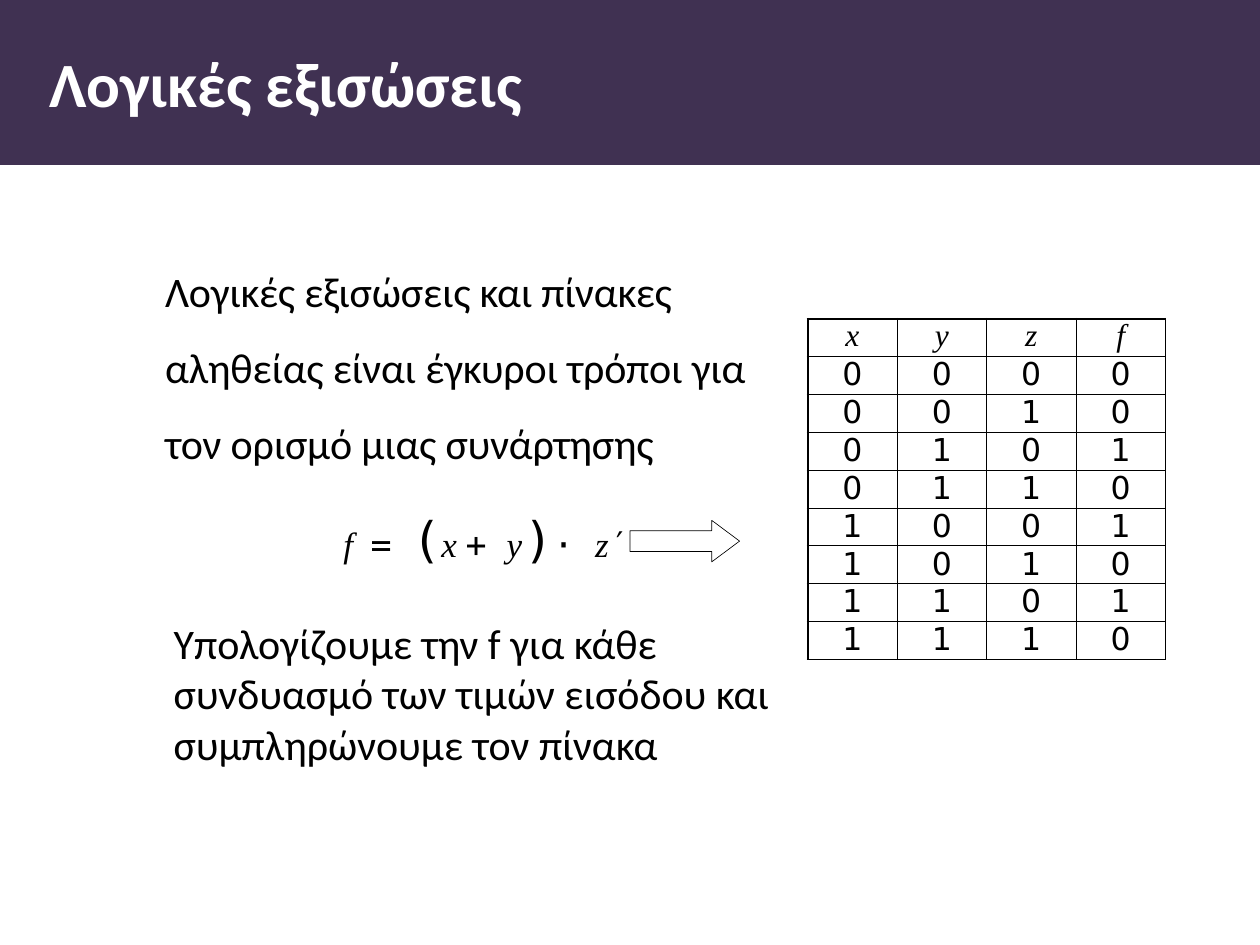
from lxml import etree
from itertools import product
from pptx import Presentation, util as u
from pptx.dml.color import RGBColor
from pptx.enum import shapes, text
from pptx.oxml import ns

PURPLE = RGBColor(0x40, 0x31, 0x52)
WHITE = RGBColor(0xFF, 0xFF, 0xFF)
BLACK = RGBColor(0, 0, 0)
BODY, SERIF, MONO, DIGITS = "Calibri", "Times New Roman", "DejaVu Sans Mono", "DejaVu Sans"
THICK, MEDIUM, THIN = 1.12, 0.75, 0.5

# Text, size, font, letter spacing in points
FORMULA = [
    ("f  ", 20, SERIF, 0), ("= ", 20, MONO, -0.6), ("(", 28, MONO, -1.3),
    ("x ", 20, SERIF, -0.1), ("+ ", 20, MONO, -0.6), ("y", 20, SERIF, 0.8),
    (")", 28, MONO, -1.1), ("⋅ ", 20, MONO, -0.1), ("z", 20, SERIF, 0.6),
    ("′", 32, MONO, 0.4),
]


def add_run(paragraph, words, size, font, color=BLACK, spacing=0, bold=False):
    """Add a run; the serif face is always italic, as for variables."""
    run = paragraph.add_run()
    run.text = words
    run.font.size = u.Pt(size)
    run.font.name = font
    run.font.bold = bold
    run.font.italic = font == SERIF
    run.font.color.rgb = color
    if spacing:
        run._r.get_or_add_rPr().set("spc", str(round(spacing * 100)))
    return run


def indent(paragraph, left, first=0):
    properties = paragraph._p.get_or_add_pPr()
    properties.set("marL", str(u.Inches(left)))
    properties.set("indent", str(u.Inches(first)))


def add_text_frame(slide, box, inset=None):
    frame = slide.shapes.add_textbox(*map(u.Inches, box)).text_frame
    frame.word_wrap = True
    if inset is not None:
        frame.margin_left = frame.margin_top = u.Inches(inset)
        frame.margin_right = frame.margin_bottom = u.Inches(inset)
    return frame


def set_title(slide, box):
    title = slide.shapes.title
    title.left, title.top, title.width, title.height = map(u.Inches, box)
    title.fill.solid()
    title.fill.fore_color.rgb = PURPLE
    frame = title.text_frame
    frame.auto_size = text.MSO_AUTO_SIZE.NONE
    frame.vertical_anchor = text.MSO_ANCHOR.MIDDLE
    paragraph = frame.paragraphs[0]
    paragraph.alignment = text.PP_ALIGN.LEFT
    indent(paragraph, 0.29)
    add_run(paragraph, "Λογικές εξισώσεις", 36, BODY, WHITE, bold=True)


def add_definition(slide, box):
    frame = add_text_frame(slide, box, inset=0)
    sentence, formula = frame.paragraphs[0], frame.add_paragraph()
    sentence.line_spacing = formula.line_spacing = 1.5
    indent(sentence, 0.01)
    add_run(sentence, "Λογικές εξισώσεις και πίνακες αληθείας είναι έγκυροι τρόποι "
            "για τον ορισµό µιας συνάρτησης", 24, BODY, spacing=-0.1)
    formula.alignment = text.PP_ALIGN.CENTER
    indent(formula, 0.2, -0.19)
    for words, size, font, spacing in FORMULA:
        run = add_run(formula, words, size, font, spacing=spacing)
    run._r.get_or_add_rPr().set("baseline", "2000")


def add_explanation(slide, box):
    paragraph = add_text_frame(slide, box).paragraphs[0]
    add_run(paragraph, "Υπολογίζουµε την f για κάθε συνδυασµό των τιµών εισόδου "
            "και συµπληρώνουµε τον πίνακα", 24, BODY)


def add_arrow(slide, box):
    arrow = slide.shapes.add_shape(shapes.MSO_SHAPE.RIGHT_ARROW, *map(u.Inches, box))
    arrow.adjustments[0] = 0.5
    arrow.adjustments[1] = 0.67
    arrow.shadow.inherit = False
    arrow.fill.background()
    arrow.line.color.rgb = BLACK
    arrow.line.width = u.Pt(0.37)


def set_borders(cell, **widths):
    """Draw black cell borders; keys are L, R, T, B in schema order."""
    properties = cell._tc.get_or_add_tcPr()
    for position, (side, width) in enumerate(widths.items()):
        line = etree.Element(ns.qn(f"a:ln{side}"), w=str(u.Pt(width)))
        fill = etree.SubElement(line, ns.qn("a:solidFill"))
        etree.SubElement(fill, ns.qn("a:srgbClr"), val=str(BLACK))
        properties.insert(position, line)


def add_truth_table(slide, box):
    rows = ["xyzf"] + [(x, y, z, int((x or y) and not z))
                       for x, y, z in product((0, 1), repeat=3)]
    last_row, last_column = len(rows) - 1, len(rows[0]) - 1
    left, top, width, height = map(u.Inches, box)
    table = slide.shapes.add_table(len(rows), len(rows[0]), left, top, width, height).table
    for row in table.rows:
        row.height = height // len(rows)
    for r, values in enumerate(rows):
        for c, value in enumerate(values):
            cell = table.cell(r, c)
            cell.margin_left = cell.margin_right = cell.margin_top = cell.margin_bottom = 0
            cell.fill.background()
            set_borders(cell,
                        L=THICK if c == 0 else THIN,
                        R=THICK if c == last_column else THIN,
                        T={0: THICK, 1: MEDIUM}.get(r, THIN),
                        B={0: MEDIUM, last_row: THICK}.get(r, THIN))
            paragraph = cell.text_frame.paragraphs[0]
            paragraph.alignment = text.PP_ALIGN.CENTER
            add_run(paragraph, str(value), 18, DIGITS if r else SERIF)


def main():
    presentation = Presentation()
    presentation.slide_width, presentation.slide_height = u.Inches(10), u.Inches(7.5)
    slide = presentation.slides.add_slide(presentation.slide_layouts[5])
    set_title(slide, (0, 0, 10, 1.31))
    add_definition(slide, (1.3, 1.91, 5.11, 2.52))
    add_arrow(slide, (5, 4.13, 0.87, 0.33))
    add_truth_table(slide, (6.41, 2.53, 2.84, 2.7))
    add_explanation(slide, (1.28, 4.85, 5, 1.31))
    presentation.save("out.pptx")


if __name__ == "__main__":
    main()
